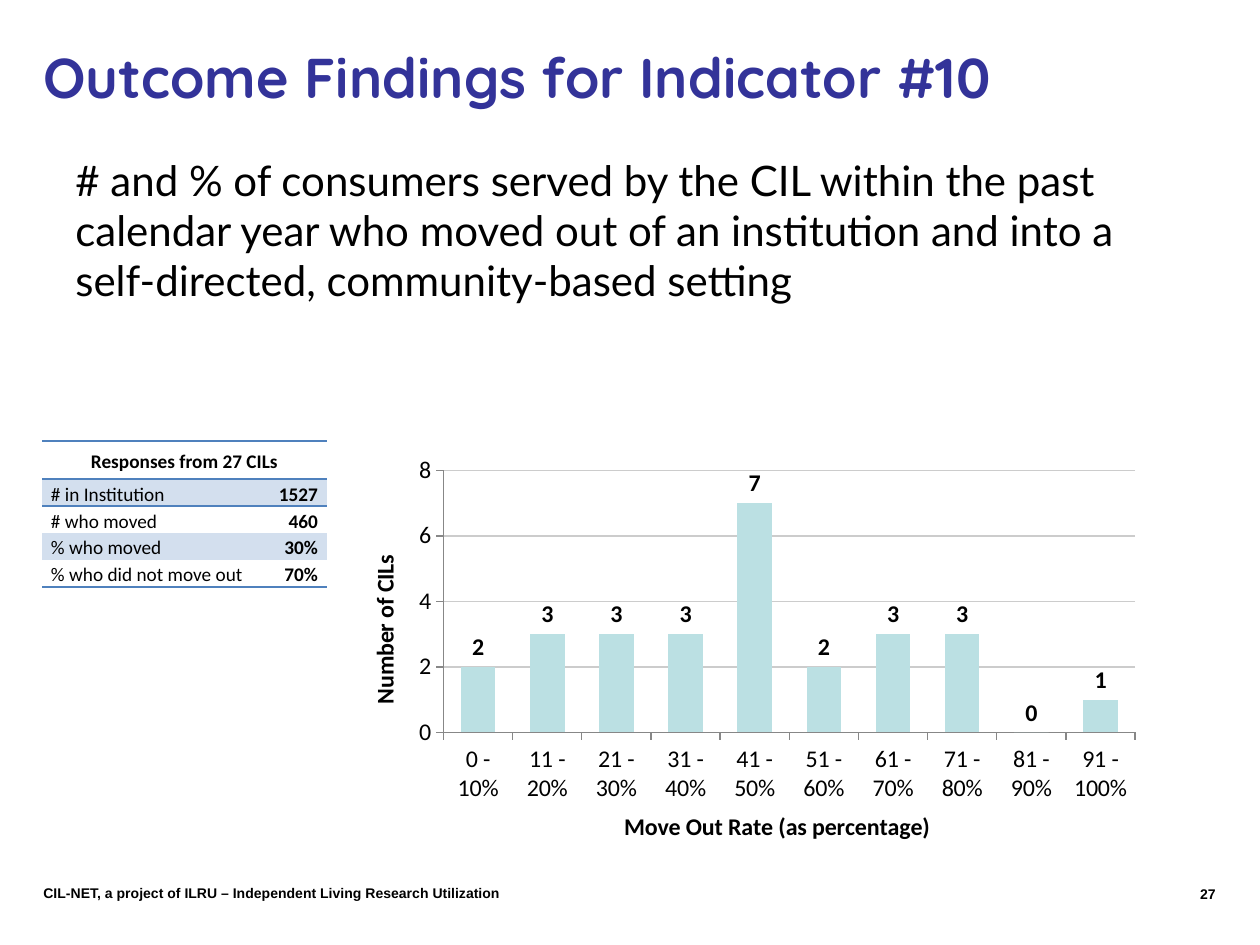
"""Build the slide on outcome findings for indicator 10."""
from dataclasses import dataclass

from lxml.etree import SubElement
from pptx import Presentation
from pptx.chart.data import CategoryChartData
from pptx.dml.color import RGBColor
from pptx.enum.chart import XL_CHART_TYPE, XL_LABEL_POSITION, XL_TICK_MARK
from pptx.enum.text import MSO_ANCHOR, PP_ALIGN
from pptx.oxml import parse_xml
from pptx.oxml.ns import nsdecls, qn
from pptx.util import Pt

SCALE = 914400 / 126


@dataclass(frozen=True)
class Theme:
    black: str = "000000"
    title: str = "333399"
    rule: str = "4F81BD"
    band: str = "D3DFEE"
    bar: str = "BBE0E3"
    grid: str = "CCCCCC"
    axis: str = "878787"
    title_size: float = 32
    body_size: float = 24
    chart_size: float = 13.7
    table_size: float = 11
    footer_size: float = 8


THEME = Theme()
LEFT, CENTER, RIGHT = PP_ALIGN.LEFT, PP_ALIGN.CENTER, PP_ALIGN.RIGHT
TOP, MIDDLE = MSO_ANCHOR.TOP, MSO_ANCHOR.MIDDLE

TEXTS = [
    ("27", (1144, 879, 84, 34), ("Arial", THEME.footer_size, THEME.black, True), RIGHT, TOP),
    ("CIL-NET, a project of ILRU – Independent Living Research Utilization",
     (31, 878, 630, 29), ("Arial", THEME.footer_size, THEME.black, True), LEFT, TOP),
    ("# and % of consumers served by the CIL within the past calendar year who moved out "
     "of an institution and into a self-directed, community-based setting",
     (63, 148, 1112, 179), ("Lato", THEME.body_size, THEME.black, False), LEFT, TOP),
    ("Outcome Findings for Indicator #10",
     (31, 21, 1061, 110), ("Quicksand", THEME.title_size, THEME.title, True), LEFT, MIDDLE),
]

TABLE_HEADING = "Responses from 27 CILs"
TABLE_ROWS = [
    ("# in Institution", "1527"),
    ("# who moved", "460"),
    ("% who moved", "30%"),
    ("% who did not move out", "70%"),
]
TABLE_ORIGIN = (42, 441)
COLUMN_WIDTHS = (222, 63)
HEADING_HEIGHT, ROW_HEIGHT = 38, 27

MOVE_OUT_COUNTS = {
    "0 - 10%": 2, "11 - 20%": 3, "21 - 30%": 3, "31 - 40%": 3, "41 - 50%": 7,
    "51 - 60%": 2, "61 - 70%": 3, "71 - 80%": 3, "81 - 90%": 0, "91 - 100%": 1,
}
CHART_BOX = (364, 364, 795, 485)
PLOT_LAYOUT = {"x": 0.1, "y": 0.22, "w": 0.87, "h": 0.54}


def px(value):
    return round(value * SCALE)


def set_font(font, name, size, color, bold=False):
    font.name, font.size, font.bold = name, Pt(size), bold
    font.color.rgb = RGBColor.from_string(color)


def add_text(slide, text, box, style, alignment, anchor):
    frame = slide.shapes.add_textbox(*map(px, box)).text_frame
    frame.word_wrap = True
    frame.vertical_anchor = anchor
    paragraph = frame.paragraphs[0]
    paragraph.text = text
    paragraph.alignment = alignment
    set_font(paragraph.font, *style)


def fill_cell(cell, text, alignment, bold, edges="", band=False):
    cell.margin_left = cell.margin_right = px(9)
    cell.margin_top = cell.margin_bottom = 0
    paragraph = cell.text_frame.paragraphs[0]
    paragraph.text = text
    paragraph.alignment = alignment
    paragraph.line_spacing = 1.15
    set_font(paragraph.font, "Calibri", THEME.table_size, THEME.black, bold)
    properties = cell._tc.get_or_add_tcPr()
    for edge in edges:
        line = SubElement(properties, qn(f"a:ln{edge}"), w=str(Pt(1)))
        SubElement(SubElement(line, qn("a:solidFill")), qn("a:srgbClr"), val=THEME.rule)
    if band:
        cell.fill.solid()
        cell.fill.fore_color.rgb = RGBColor.from_string(THEME.band)
    else:
        cell.fill.background()


def add_response_table(slide):
    heights = [HEADING_HEIGHT] + [ROW_HEIGHT] * len(TABLE_ROWS)
    box = (*TABLE_ORIGIN, sum(COLUMN_WIDTHS), sum(heights))
    table = slide.shapes.add_table(len(heights), len(COLUMN_WIDTHS), *map(px, box)).table
    table.first_row = table.horz_banding = False
    style = table._tbl.tblPr.find(qn("a:tableStyleId"))
    style.text = "{2D5ABB26-0587-4C30-8999-92F81FD0307C}"
    for column, width in zip(table.columns, COLUMN_WIDTHS):
        column.width = px(width)
    for row, height in zip(table.rows, heights):
        row.height = px(height)
    heading = table.cell(0, 0)
    heading.merge(table.cell(0, 1))
    fill_cell(heading, TABLE_HEADING, CENTER, True, "TB")
    fill_cell(table.cell(0, 1), "", CENTER, True, "TB")
    heading.vertical_anchor = MIDDLE
    for number, (label, value) in enumerate(TABLE_ROWS, 1):
        edges = {1: "T", len(TABLE_ROWS): "B"}.get(number, "")
        band = number % 2 == 1
        fill_cell(table.cell(number, 0), label, LEFT, False, edges, band)
        fill_cell(table.cell(number, 1), value, RIGHT, True, edges, band)


def style_axis(axis, title):
    axis.major_tick_mark = XL_TICK_MARK.OUTSIDE
    axis.minor_tick_mark = XL_TICK_MARK.NONE
    axis.format.line.color.rgb = RGBColor.from_string(THEME.axis)
    axis.format.line.width = Pt(0.75)
    set_font(axis.tick_labels.font, "Calibri", THEME.chart_size, THEME.black)
    paragraph = axis.axis_title.text_frame.paragraphs[0]
    paragraph.text = title
    set_font(paragraph.font, "Calibri", THEME.chart_size, THEME.black, True)


def add_move_out_chart(slide):
    data = CategoryChartData()
    data.categories = list(MOVE_OUT_COUNTS)
    data.add_series("Series 1", list(MOVE_OUT_COUNTS.values()))
    chart = slide.shapes.add_chart(
        XL_CHART_TYPE.COLUMN_CLUSTERED, *map(px, CHART_BOX), data).chart
    chart.has_legend = chart.has_title = False
    set_font(chart.font, "Calibri", THEME.chart_size, THEME.black)

    style_axis(chart.category_axis, "Move Out Rate (as percentage)")
    value_axis = chart.value_axis
    style_axis(value_axis, "Number of CILs")
    value_axis.minimum_scale, value_axis.maximum_scale, value_axis.major_unit = 0, 8, 2
    grid = value_axis.major_gridlines.format.line
    grid.color.rgb = RGBColor.from_string(THEME.grid)
    grid.width = Pt(0.75)

    plot = chart.plots[0]
    plot.gap_width = 100
    plot.vary_by_categories = False
    bars = plot.series[0].format.fill
    bars.solid()
    bars.fore_color.rgb = RGBColor.from_string(THEME.bar)
    plot.has_data_labels = True
    labels = plot.data_labels
    labels.show_value = True
    labels.position = XL_LABEL_POSITION.OUTSIDE_END
    set_font(labels.font, "Calibri", THEME.chart_size, THEME.black, True)

    area = chart._chartSpace.chart.plotArea
    for old_layout in area.findall(qn("c:layout")):
        area.remove(old_layout)
    modes = '<c:xMode val="edge"/><c:yMode val="edge"/>'
    sizes = "".join(f'<c:{key} val="{value}"/>' for key, value in PLOT_LAYOUT.items())
    area.insert(0, parse_xml(
        f'<c:layout {nsdecls("c")}><c:manualLayout><c:layoutTarget val="inner"/>'
        f"{modes}{sizes}</c:manualLayout></c:layout>"))


def main():
    presentation = Presentation()
    presentation.slide_width, presentation.slide_height = px(1260), px(945)
    slide = presentation.slides.add_slide(presentation.slide_layouts[6])
    for text in TEXTS:
        add_text(slide, *text)
    add_move_out_chart(slide)
    add_response_table(slide)
    presentation.save("out.pptx")


if __name__ == "__main__":
    main()
